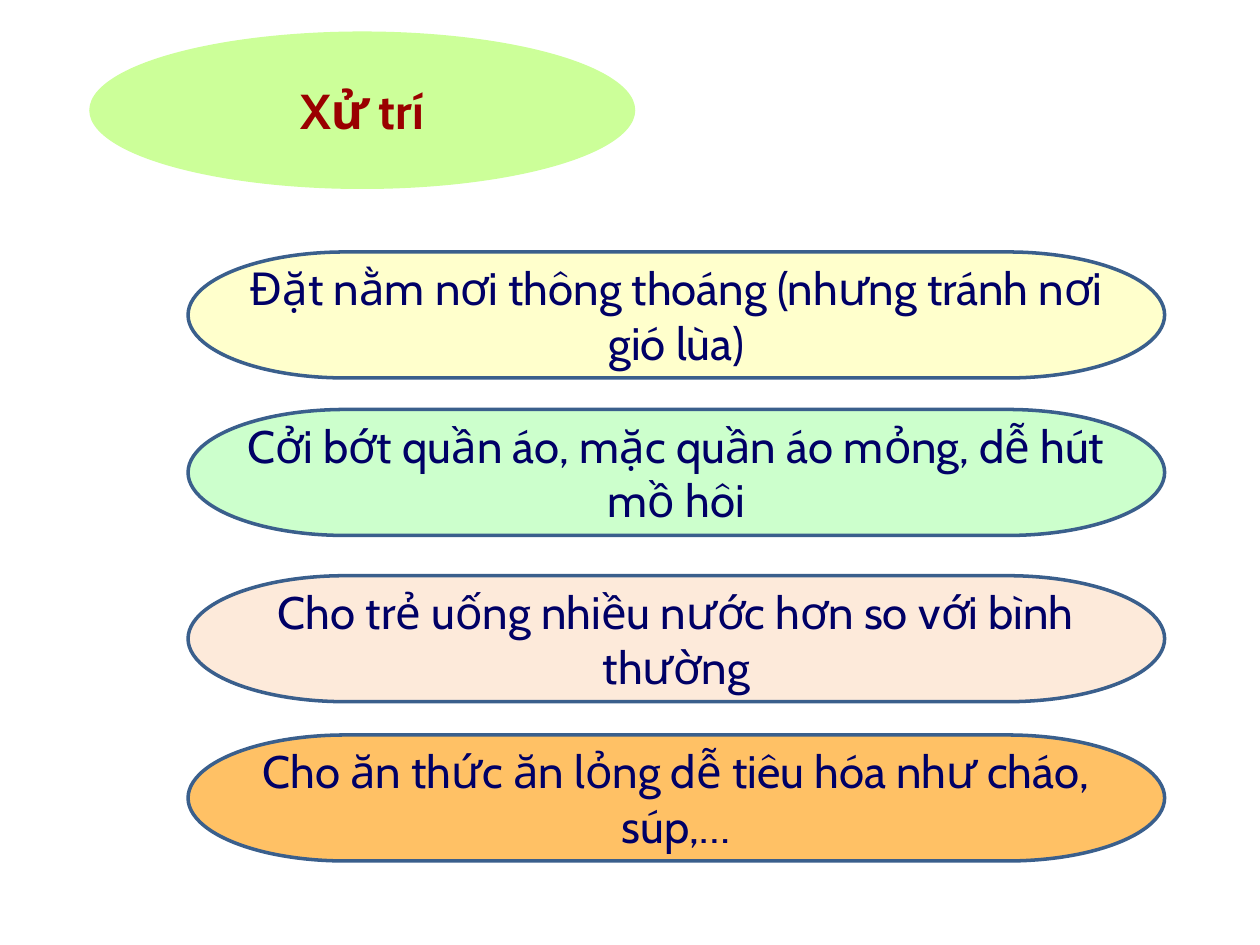
from pptx import Presentation
from pptx.dml.color import RGBColor
from pptx.enum.shapes import MSO_SHAPE as SHAPE
from pptx.enum.text import MSO_ANCHOR as ANCHOR, MSO_AUTO_SIZE as AUTO, PP_ALIGN as ALIGN
from pptx.util import Pt

COLORS = {
    "title_fill": "CCFF99",
    "title_text": "9A0000",
    "text": "000066",
    "outline": "3A5F8C",
    "yellow": "FFFFCC",
    "green": "CCFFCC",
    "peach": "FDEADA",
    "orange": "FFC165",
}
TITLE_BOX = (51, 18, 312, 90)
STEP_LEFT, STEP_WIDTH, STEP_HEIGHT = 107.5, 558, 72
STEPS = [
    (144, "yellow", "Đặt nằm nơi thông thoáng (nhưng tránh nơi gió lùa)"),
    (234, "green", "Cởi bớt quần áo, mặc quần áo mỏng, dễ hút mồ hôi"),
    (329, "peach", "Cho trẻ uống nhiều nước hơn so với bình thường"),
    (420, "orange", "Cho ăn thức ăn lỏng dễ tiêu hóa như cháo, súp,…"),
]


def rgb(name):
    return RGBColor.from_string(COLORS[name])


def write_text(sp, text, size=26, color="text", bold=False):
    tf = sp.text_frame
    tf.word_wrap = True
    tf.auto_size = AUTO.NONE
    tf.vertical_anchor = ANCHOR.MIDDLE
    p = tf.paragraphs[0]
    p.alignment = ALIGN.CENTER
    r = p.add_run()
    r.text = text
    r.font.name = "Cabin"
    r.font.size = Pt(size)
    r.font.bold = bold
    r.font.color.rgb = rgb(color)


def add_filled_shape(s, kind, box, fill, outline=None):
    sp = s.shapes.add_shape(kind, *map(Pt, box))
    sp.shadow.inherit = False
    sp.fill.solid()
    sp.fill.fore_color.rgb = rgb(fill)
    if outline:
        sp.line.color.rgb = rgb(outline)
        sp.line.width = Pt(2)
    else:
        sp.line.fill.background()
    return sp


def add_title(s, text):
    ellipse = add_filled_shape(s, SHAPE.OVAL, TITLE_BOX, "title_fill")
    title = s.shapes.title
    title.left, title.top, title.width, title.height = map(Pt, TITLE_BOX)
    title.element.addprevious(ellipse.element)
    write_text(title, text, size=28, color="title_text", bold=True)


def add_step(s, top, fill, text):
    box = (STEP_LEFT, top, STEP_WIDTH, STEP_HEIGHT)
    sp = add_filled_shape(s, SHAPE.FLOWCHART_TERMINATOR, box, fill, "outline")
    write_text(sp, text)


def main():
    prs = Presentation()
    prs.slide_width, prs.slide_height = Pt(720), Pt(540)
    s = prs.slides.add_slide(prs.slide_layouts[5])
    add_title(s, "Xử trí")
    for top, fill, text in STEPS:
        add_step(s, top, fill, text)
    prs.save("out.pptx")


if __name__ == "__main__":
    main()
